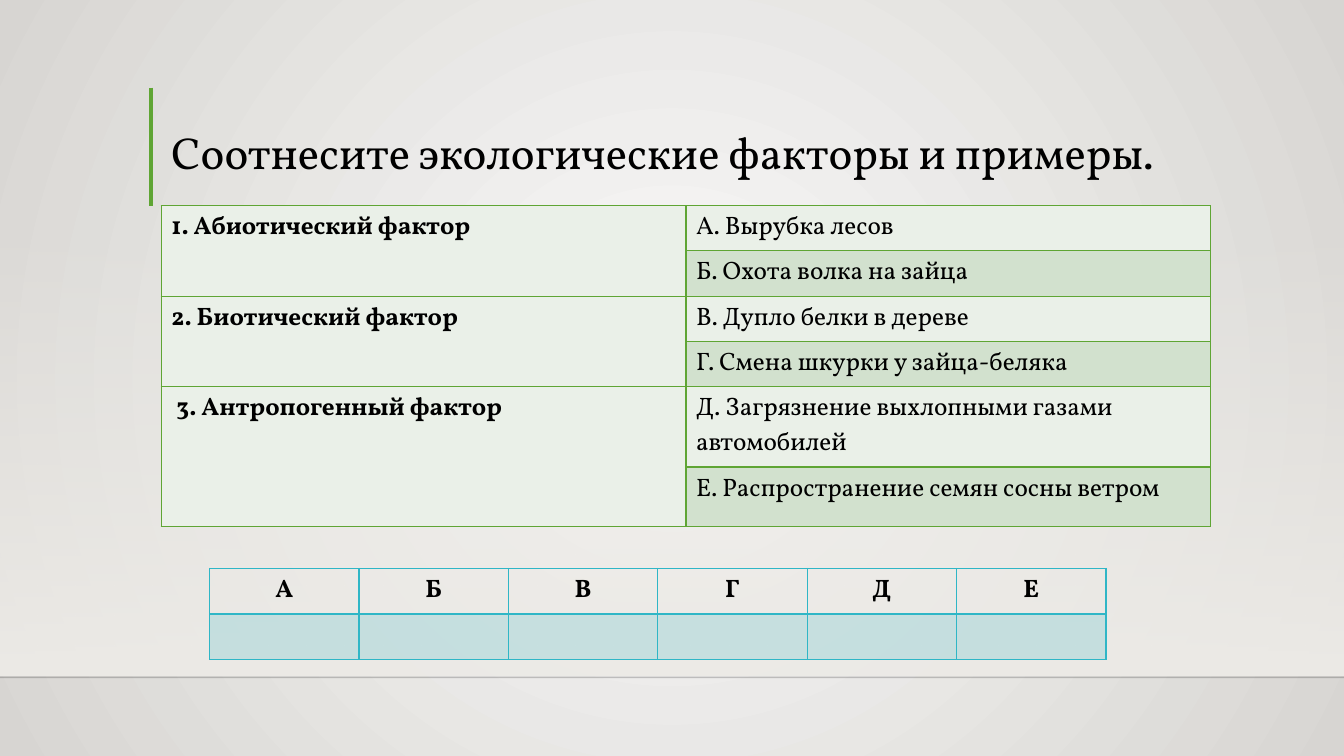
from lxml import etree
from pptx import Presentation
from pptx.dml.color import RGBColor
from pptx.enum.shapes import MSO_CONNECTOR, MSO_SHAPE
from pptx.enum.text import MSO_ANCHOR, MSO_AUTO_SIZE, PP_ALIGN
from pptx.oxml.ns import qn
from pptx.util import Inches, Pt

STRAIGHT = MSO_CONNECTOR.STRAIGHT
RECT = MSO_SHAPE.RECTANGLE
BOTTOM = MSO_ANCHOR.BOTTOM
NO_AUTOFIT = MSO_AUTO_SIZE.NONE
LEFT, CENTER = PP_ALIGN.LEFT, PP_ALIGN.CENTER

BLACK = RGBColor(0x00, 0x00, 0x00)
RULE = RGBColor(0x00, 0x00, 0x01)
GREEN = RGBColor(0x5F, 0xA5, 0x34)
LIGHT_GREEN = RGBColor(0xEA, 0xF0, 0xE8)
BAND_GREEN = RGBColor(0xD2, 0xE1, 0xCE)
TEAL = RGBColor(0x2F, 0xB6, 0xC6)
BG_CENTER = RGBColor(0xFA, 0xFA, 0xF9)
BG_EDGE = RGBColor(0xD7, 0xD5, 0xD2)
WALL = RGBColor(0xED, 0xEB, 0xE7)


def add_text(tf, text, size=18, bold=False, align=LEFT, spacing=None):
    p = tf.paragraphs[0]
    p.alignment = align
    p.line_spacing = spacing
    r = p.add_run()
    r.text = text
    r.font.name = "Vollkorn"
    r.font.size = Pt(size)
    r.font.bold = bold
    r.font.color.rgb = BLACK


def add_borders(cell, color, bottom=1):
    tc_pr = cell._tc.get_or_add_tcPr()
    for side, width in (("L", 1), ("R", 1), ("T", 1), ("B", bottom)):
        ln = etree.SubElement(tc_pr, qn(f"a:ln{side}"), w=str(Pt(width)))
        fill = etree.SubElement(ln, qn("a:solidFill"))
        etree.SubElement(fill, qn("a:srgbClr"), val=str(color))


prs = Presentation()
prs.slide_width, prs.slide_height = Inches(13.33), Inches(7.5)
s = prs.slides.add_slide(prs.slide_layouts[5])

fill = s.background.fill
fill.gradient()
for stop, color in zip(fill.gradient_stops, (BG_CENTER, BG_EDGE)):
    stop.color.rgb = color
grad = s.element.find(".//" + qn("a:gradFill"))
grad.remove(grad.find(qn("a:lin")))
circle = etree.SubElement(grad, qn("a:path"), path="circle")
etree.SubElement(circle, qn("a:fillToRect"), l="50000", t="50000", r="50000", b="50000")

sp = s.shapes.add_shape(RECT, 0, Inches(2.2), Inches(13.33), Inches(4.5))
sp.shadow.inherit = False
sp.line.fill.background()
sp.fill.gradient()
sp.fill.gradient_angle = 270
for stop in sp.fill.gradient_stops:
    stop.color.rgb = WALL
first_stop = sp.element.find(".//" + qn("a:srgbClr"))
etree.SubElement(first_stop, qn("a:alpha"), val="0")

for x1, y1, x2, y2, color, width, alpha in (
    (0, 6.72, 13.33, 6.72, RULE, 1, 20),
    (1.5, 0.87, 1.5, 2.04, GREEN, 3, 100),
):
    line = s.shapes.add_connector(STRAIGHT, Inches(x1), Inches(y1), Inches(x2), Inches(y2))
    line.line.color.rgb = color
    line.line.width = Pt(width)
    clr = line.element.find(".//" + qn("a:srgbClr"))
    etree.SubElement(clr, qn("a:alpha"), val=str(alpha * 1000))
    etree.SubElement(line.element.spPr, qn("a:effectLst"))

title = s.shapes.title
title.left, title.top = Inches(1.6), Inches(0.68)
title.width, title.height = Inches(10.41), Inches(1.15)
tf = title.text_frame
tf.word_wrap = True
tf.auto_size = NO_AUTOFIT
tf.vertical_anchor = BOTTOM
add_text(tf, "Соотнесите экологические факторы и примеры.", size=32, spacing=0.9)

factors = ["1. Абиотический фактор", "2. Биотический фактор", " 3. Антропогенный фактор"]
examples = [
    "А. Вырубка лесов",
    "Б. Охота волка на зайца",
    "В. Дупло белки в дереве",
    "Г. Смена шкурки у зайца-беляка",
    "Д. Загрязнение выхлопными газами автомобилей",
    "Е. Распространение семян сосны ветром",
]
heights = [0.37, 0.37, 0.37, 0.37, 0.64, 0.59]
table = s.shapes.add_table(
    6, 2, Inches(1.6), Inches(2.04), Inches(10.41), Inches(sum(heights))
).table
table.first_row = table.horz_banding = False
for i, (example, height) in enumerate(zip(examples, heights)):
    table.rows[i].height = Inches(height)
    for j, color in enumerate((LIGHT_GREEN, BAND_GREEN if i % 2 else LIGHT_GREEN)):
        cell = table.cell(i, j)
        add_borders(cell, GREEN)
        cell.fill.solid()
        cell.fill.fore_color.rgb = color
    add_text(table.cell(i, 1).text_frame, example)
for i, factor in enumerate(factors):
    cell = table.cell(2 * i, 0)
    cell.merge(table.cell(2 * i + 1, 0))
    add_text(cell.text_frame, factor, bold=True)

answers = s.shapes.add_table(
    2, 6, Inches(2.08), Inches(5.64), Inches(8.89), Inches(0.9)
).table
answers.first_row = answers.horz_banding = False
for j, letter in enumerate("АБВГДЕ"):
    head, blank = answers.cell(0, j), answers.cell(1, j)
    add_borders(head, TEAL, bottom=2)
    head.fill.background()
    add_text(head.text_frame, letter, bold=True, align=CENTER)
    add_borders(blank, TEAL)
    blank.fill.solid()
    blank.fill.fore_color.rgb = TEAL
    clr = blank._tc.tcPr.find(qn("a:solidFill")).find(qn("a:srgbClr"))
    etree.SubElement(clr, qn("a:alpha"), val="20000")

prs.save("out.pptx")
